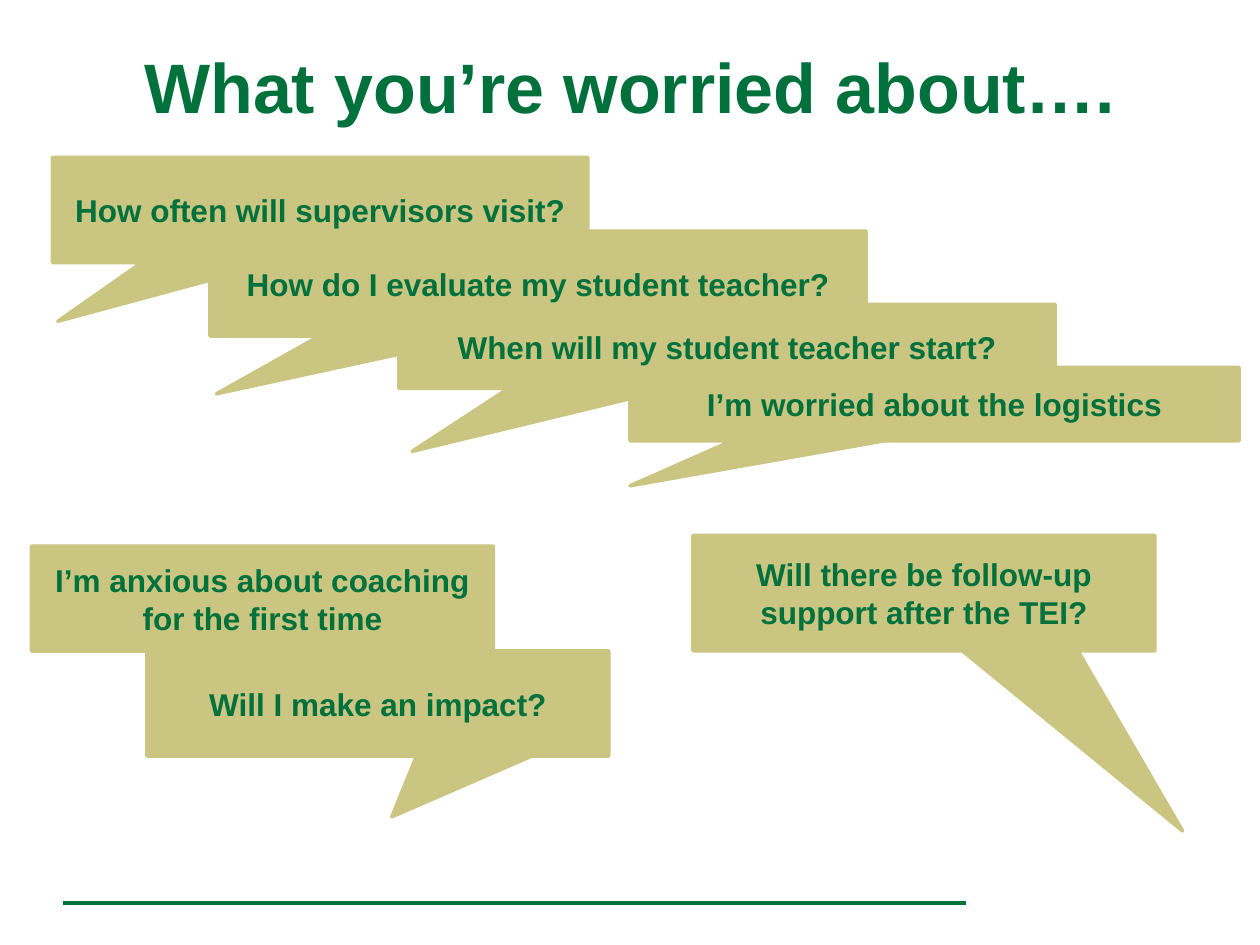
from pptx import Presentation
from pptx.dml.color import RGBColor
from pptx.enum.shapes import MSO_CONNECTOR as Connector, MSO_SHAPE as Shape
from pptx.enum.text import MSO_ANCHOR as Anchor, PP_ALIGN as Align
from pptx.oxml.ns import qn
from pptx.util import Pt
from lxml import etree

COLORS = {"green": "00703C", "sand": "CAC580"}
FONT = "Arial"

# wording, (left, top, width, height), (tip x, tip y) as shares of the size from the centre
WORRIES = [
    ("How often will supervisors visit?", (30, 90, 306, 60), (-0.49, 1.06)),
    ("How do I evaluate my student teacher?", (120, 132, 375, 60), (-0.49, 1.05)),
    ("Will there be follow-up support after the TEI?", (396, 306, 264, 66), (0.56, 2.06)),
    ("When will my student teacher start?", (228, 174, 375, 48), (-0.48, 1.25)),
    ("I’m worried about the logistics", (360, 210, 348, 42), (-0.5, 1.11)),
    ("I’m anxious about coaching for the first time", (18, 312, 264, 60), (0.03, 1.08)),
    ("Will I make an impact?", (84, 372, 264, 60), (0.03, 1.08)),
]


def color(name):
    return RGBColor.from_string(COLORS[name])


def write(frame, wording, size, anchor):
    frame.word_wrap = True
    frame.vertical_anchor = anchor
    paragraph = frame.paragraphs[0]
    paragraph.text = wording
    paragraph.alignment = Align.CENTER
    font = paragraph.runs[0].font
    font.name, font.size, font.bold = FONT, Pt(size), True
    font.color.rgb = color("green")


def add_title(slide, wording):
    title = slide.shapes.add_textbox(Pt(0), Pt(21.6), Pt(720), Pt(90))
    write(title.text_frame, wording, 40, Anchor.TOP)


def add_footer_rule(slide):
    rule = slide.shapes.add_connector(Connector.STRAIGHT, Pt(36), Pt(516), Pt(552), Pt(516))
    rule.line.color.rgb = color("green")
    rule.line.width = Pt(2.5)
    etree.SubElement(rule._element.spPr, qn("a:effectLst"))


def add_worry(slide, wording, box, tip):
    bubble = slide.shapes.add_shape(Shape.RECTANGULAR_CALLOUT, *map(Pt, box))
    bubble.adjustments[0], bubble.adjustments[1] = tip
    bubble.shadow.inherit = False
    bubble.fill.solid()
    bubble.fill.fore_color.rgb = color("sand")
    bubble.line.color.rgb = color("sand")
    bubble.line.width = Pt(2)
    write(bubble.text_frame, wording, 18, Anchor.MIDDLE)


def main():
    deck = Presentation()
    deck.slide_width, deck.slide_height = Pt(720), Pt(540)
    slide = deck.slides.add_slide(deck.slide_layouts[6])
    add_footer_rule(slide)
    add_title(slide, "What you’re worried about….")
    for wording, box, tip in WORRIES:
        add_worry(slide, wording, box, tip)
    deck.save("out.pptx")


if __name__ == "__main__":
    main()
